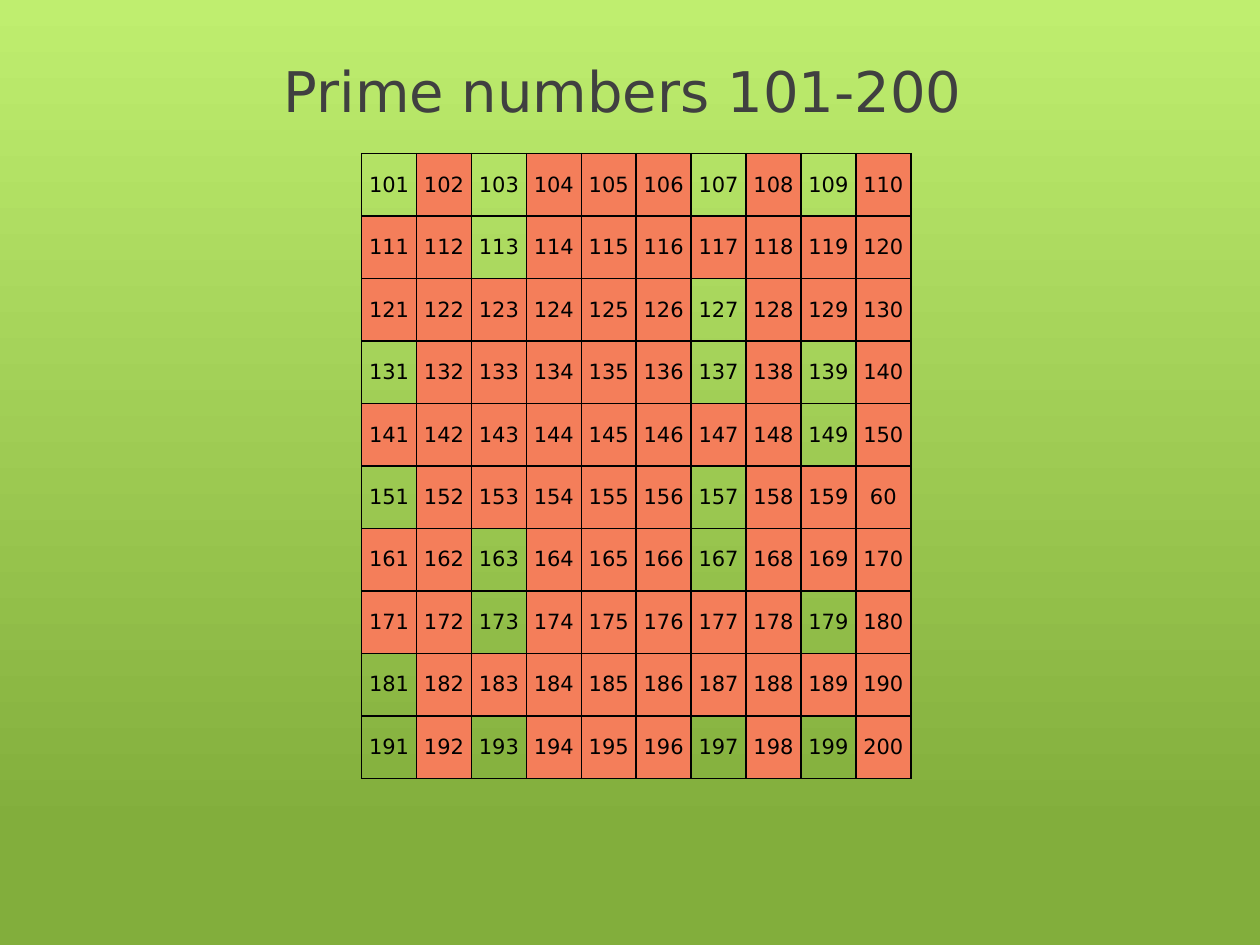
"""Build a slide with a ten by ten chart of the prime numbers from 101 to 200."""
from dataclasses import dataclass
from math import isqrt

from lxml.etree import SubElement
from pptx import Presentation
from pptx.dml.color import RGBColor
from pptx.enum.text import MSO_ANCHOR, MSO_AUTO_SIZE, PP_ALIGN
from pptx.oxml.ns import qn
from pptx.slide import Slide
from pptx.table import Table, _Cell
from pptx.text.text import TextFrame
from pptx.util import Inches, Pt

COLORS = {
    "sky": "BFEE6F",
    "grass": "82AE3C",
    "composite": "F47E5A",
    "heading": "404040",
    "ink": "000000",
}
FONT = "DejaVu Sans"
SIDE = 10
FIRST = 101
PRINTED_AS = {160: "60"}


@dataclass(frozen=True)
class NumberCell:
    number: int

    @property
    def label(self) -> str:
        return PRINTED_AS.get(self.number, str(self.number))

    @property
    def is_prime(self) -> bool:
        return all(self.number % d for d in range(2, isqrt(self.number) + 1))


def write(frame: TextFrame, text: str, *, size: float, color: str) -> None:
    paragraph = frame.paragraphs[0]
    paragraph.alignment = PP_ALIGN.CENTER
    run = paragraph.add_run()
    run.text = text
    run.font.name = FONT
    run.font.size = Pt(size)
    run.font.color.rgb = RGBColor.from_string(COLORS[color])


def paint_background(slide: Slide) -> None:
    fill = slide.background.fill
    fill.gradient()
    fill.gradient_angle = 270
    for stop, position, color in zip(fill.gradient_stops, (0, 0.88), ("sky", "grass")):
        stop.position = position
        stop.color.rgb = RGBColor.from_string(COLORS[color])


def add_heading(slide: Slide, text: str) -> None:
    heading = slide.shapes.title
    heading.left, heading.top = Inches(0.98), Inches(0.21)
    heading.width, heading.height = Inches(7.79), Inches(1.01)
    heading.text_frame.auto_size = MSO_AUTO_SIZE.NONE
    heading.text_frame.vertical_anchor = MSO_ANCHOR.MIDDLE
    write(heading.text_frame, text, size=32, color="heading")


def outline(cell: _Cell) -> None:
    properties = cell._tc.get_or_add_tcPr()
    for edge in ("a:lnL", "a:lnR", "a:lnT", "a:lnB"):
        line = SubElement(properties, qn(edge), w=str(Pt(1)))
        solid = SubElement(line, qn("a:solidFill"))
        SubElement(solid, qn("a:srgbClr"), val=COLORS["ink"])


def draw_number(cell: _Cell, entry: NumberCell) -> None:
    cell.margin_left = cell.margin_right = Inches(0.04)
    cell.margin_top = cell.margin_bottom = Inches(0.05)
    cell.vertical_anchor = MSO_ANCHOR.MIDDLE
    outline(cell)
    if entry.is_prime:
        cell.fill.background()
    else:
        cell.fill.solid()
        cell.fill.fore_color.rgb = RGBColor.from_string(COLORS["composite"])
    write(cell.text_frame, entry.label, size=12, color="ink")


def add_number_grid(slide: Slide) -> Table:
    grid = slide.shapes.add_table(
        SIDE, SIDE, Inches(2.87), Inches(1.22), Inches(4.36), Inches(4.96)
    ).table
    grid.first_row = grid.horz_banding = False
    for offset, cell in enumerate(grid.iter_cells()):
        draw_number(cell, NumberCell(FIRST + offset))
    return grid


def main() -> None:
    presentation = Presentation()
    presentation.slide_width, presentation.slide_height = Inches(10), Inches(7.5)
    slide = presentation.slides.add_slide(presentation.slide_layouts.get_by_name("Title Only"))
    paint_background(slide)
    add_number_grid(slide)
    add_heading(slide, " Prime numbers 101-200")
    presentation.save("out.pptx")


if __name__ == "__main__":
    main()
